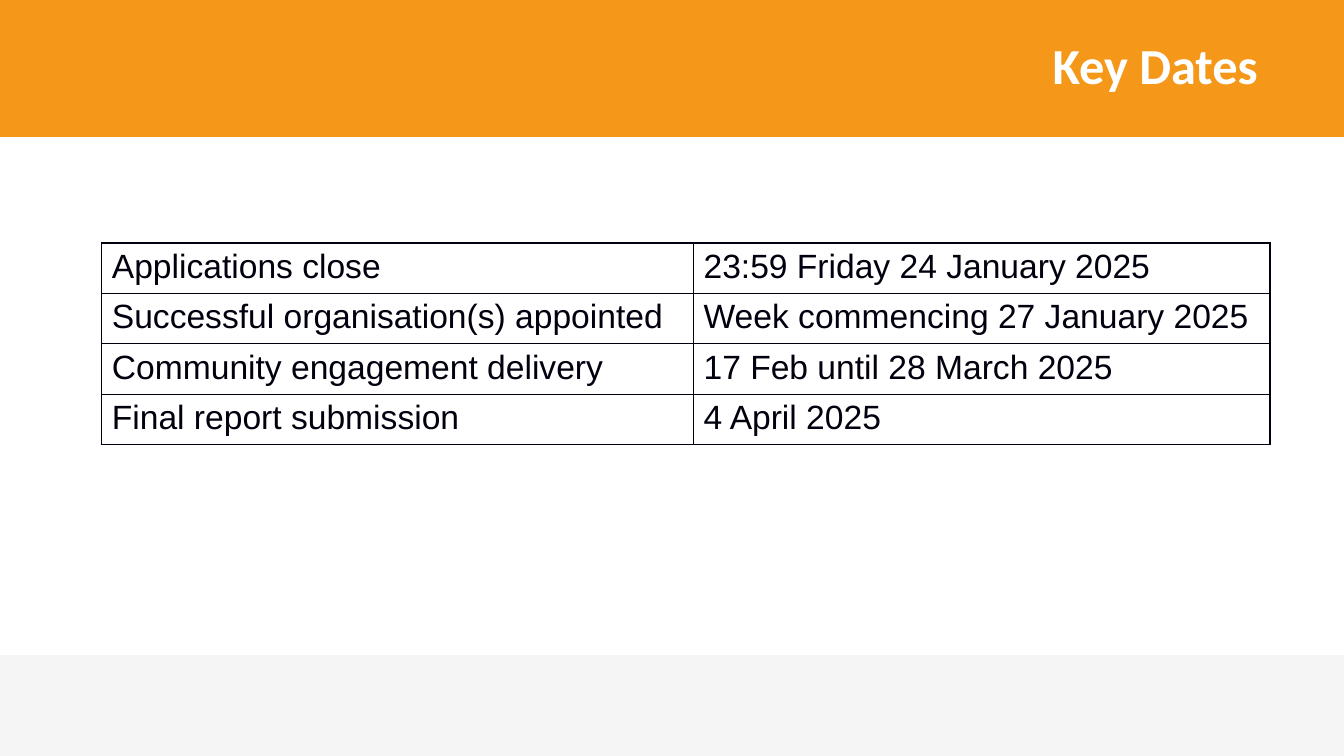
"""Build the Key Dates slide: a title band, a table of dates and a footer band."""
from dataclasses import dataclass

from lxml.etree import SubElement
from pptx import Presentation
from pptx.dml.color import RGBColor
from pptx.enum.shapes import MSO_SHAPE
from pptx.enum.text import MSO_ANCHOR, PP_ALIGN
from pptx.oxml import parse_xml
from pptx.oxml.ns import nsdecls, qn
from pptx.slide import Slide
from pptx.table import _Cell
from pptx.text.text import TextFrame
from pptx.util import Pt


@dataclass(frozen=True)
class Theme:
    orange: str = "F59718"
    grey: str = "D9D9D9"
    white: str = "FFFFFF"
    ink: str = "00000E"
    title_font: str = "Calibri"
    body_font: str = "Arial"
    title_size: float = 36
    body_size: float = 24
    rule_width: float = 1


@dataclass(frozen=True)
class Band:
    top: float
    height: float
    color: str
    opacity: int = 100


@dataclass(frozen=True)
class KeyDate:
    milestone: str
    date: str


THEME = Theme()
SLIDE_WIDTH, SLIDE_HEIGHT = 960, 540
HEADER = Band(0, 97.9, THEME.orange)
FOOTER = Band(468, 72, THEME.grey, opacity=25)
TABLE_LEFT, TABLE_TOP = 72.7, 173.5
COLUMN_WIDTHS = (422.7, 411.8)
ROW_HEIGHT = 36
KEY_DATES = (
    KeyDate("Applications close", "23:59 Friday 24 January 2025"),
    KeyDate("Successful organisation(s) appointed", "Week commencing 27 January 2025"),
    KeyDate("Community engagement delivery", "17 Feb until 28 March 2025"),
    KeyDate("Final report submission", "4 April 2025"),
)


def write(frame: TextFrame, text: str, *, font: str, size: float, color: str,
          bold: bool = False, align: PP_ALIGN = PP_ALIGN.LEFT, spacing: float = 1.0) -> None:
    frame.word_wrap = True
    paragraph = frame.paragraphs[0]
    paragraph.alignment = align
    paragraph.line_spacing = spacing
    run = paragraph.add_run()
    run.text = text
    run.font.name = font
    run.font.size = Pt(size)
    run.font.bold = bold
    run.font.color.rgb = RGBColor.from_string(color)


def draw_band(slide: Slide, band: Band) -> None:
    strip = slide.shapes.add_shape(MSO_SHAPE.RECTANGLE, Pt(0), Pt(band.top),
                                   Pt(SLIDE_WIDTH), Pt(band.height))
    strip.shadow.inherit = False
    strip.line.fill.background()
    strip.fill.solid()
    strip.fill.fore_color.rgb = RGBColor.from_string(band.color)
    if band.opacity < 100:
        tint = strip.element.spPr.find(qn("a:solidFill")).find(qn("a:srgbClr"))
        SubElement(tint, qn("a:alpha"), val=str(band.opacity * 1000))
    slide.shapes.title.element.addprevious(strip.element)


def draw_title(slide: Slide, text: str) -> None:
    title = slide.shapes.title
    title.left, title.top = Pt(94.3), Pt(HEADER.top)
    title.width, title.height = Pt(811.4), Pt(HEADER.height)
    title.text_frame.vertical_anchor = MSO_ANCHOR.MIDDLE
    write(title.text_frame, text, font=THEME.title_font, size=THEME.title_size,
          color=THEME.white, bold=True, align=PP_ALIGN.RIGHT, spacing=0.9)


def rule_cell(cell: _Cell) -> None:
    cell.fill.background()
    properties = cell._tc.get_or_add_tcPr()
    for position, side in enumerate("LRTB"):
        properties.insert(position, parse_xml(
            f'<a:ln{side} {nsdecls("a")} w="{Pt(THEME.rule_width)}"><a:solidFill>'
            f'<a:srgbClr val="{THEME.ink}"/></a:solidFill></a:ln{side}>'))


def draw_key_dates(slide: Slide, key_dates: tuple[KeyDate, ...]) -> None:
    table = slide.shapes.add_table(
        len(key_dates), len(COLUMN_WIDTHS), Pt(TABLE_LEFT), Pt(TABLE_TOP),
        Pt(sum(COLUMN_WIDTHS)), Pt(ROW_HEIGHT * len(key_dates))).table
    table.first_row = table.horz_banding = False
    for column, width in zip(table.columns, COLUMN_WIDTHS):
        column.width = Pt(width)
    for row, key_date in zip(table.rows, key_dates):
        row.height = Pt(ROW_HEIGHT)
        for cell, text in zip(row.cells, (key_date.milestone, key_date.date)):
            rule_cell(cell)
            write(cell.text_frame, text, font=THEME.body_font, size=THEME.body_size,
                  color=THEME.ink)


def main() -> None:
    deck = Presentation()
    deck.slide_width, deck.slide_height = Pt(SLIDE_WIDTH), Pt(SLIDE_HEIGHT)
    slide = deck.slides.add_slide(deck.slide_layouts.get_by_name("Title Only"))
    for band in (FOOTER, HEADER):
        draw_band(slide, band)
    draw_title(slide, "Key Dates")
    draw_key_dates(slide, KEY_DATES)
    deck.save("out.pptx")


if __name__ == "__main__":
    main()
